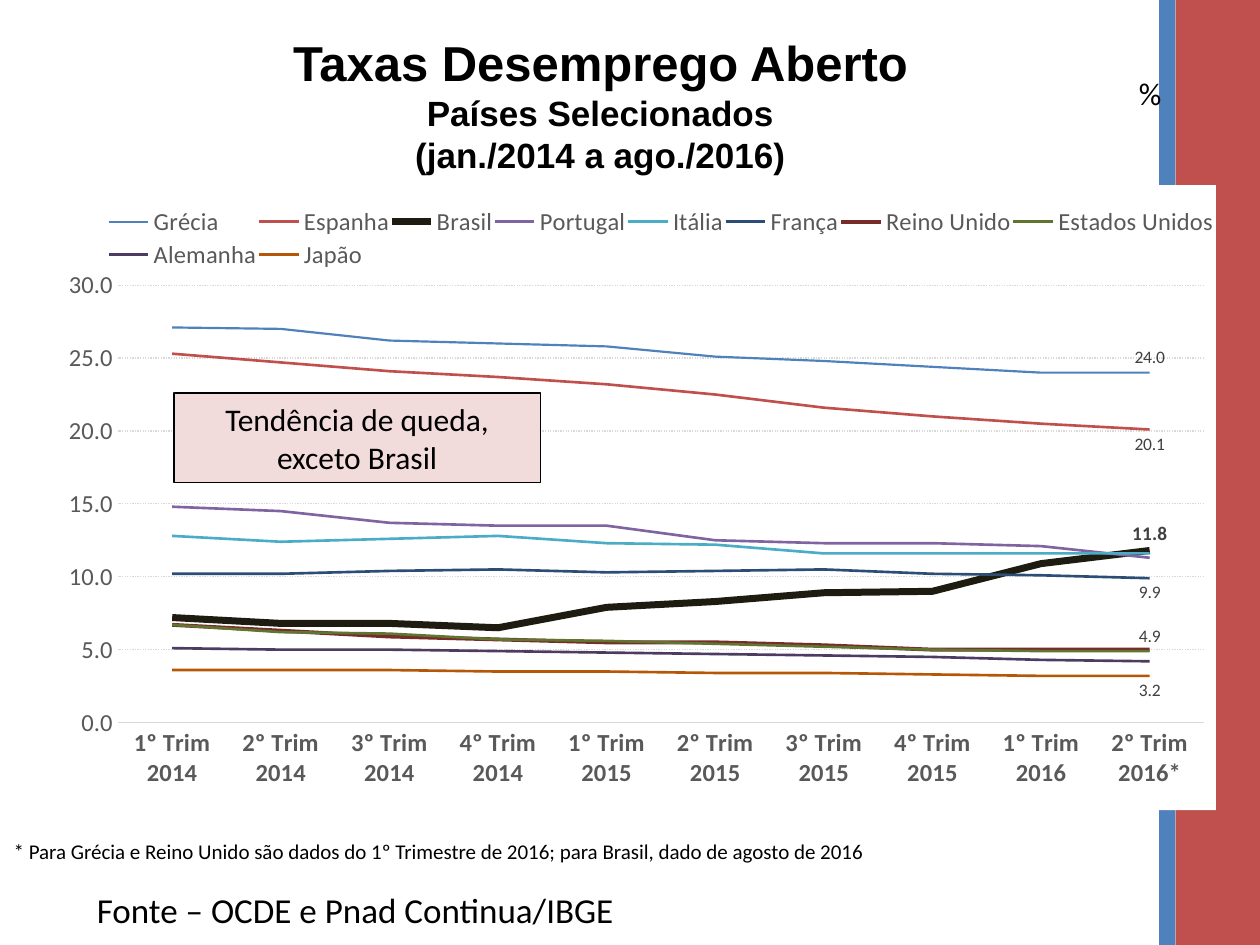
from pptx import Presentation, oxml
from pptx import util as u
from pptx.chart.data import CategoryChartData
from pptx.dml.color import RGBColor
from pptx.enum import chart as ch, dml, shapes, text
from pptx.oxml import ns

THEME = {
    "heading_font": "Arial", "body_font": "Calibri",
    "black": "000000", "white": "FFFFFF", "grey": "595959", "label": "404040",
    "rule": "D9D9D9", "callout": "F2DCDB", "blue": "4F81BD", "red": "C0504D",
    "title": 28, "subtitle": 20, "source": 20, "body": 18, "axis": 14,
    "note": 12, "value": 10, "key_value": 11,
}

HEADINGS = [
    ("Taxas Desemprego Aberto", "title"),
    ("Países Selecionados", "subtitle"),
    ("(jan./2014 a ago./2016)", "subtitle"),
]
BARS = [(9.2, 0.13, "blue"), (9.33, 0.67, "red")]
CAPTIONS = [
    ("* Para Grécia e Reino Unido são dados do 1º Trimestre de 2016; "
     "para Brasil, dado de agosto de 2016", "note", (0.01, 6.61, 7.01, 0.3)),
    ("%", "body", (8.94, 0.54, 0.71, 0.4)),
    ("Fonte – OCDE e Pnad Continua/IBGE", "source", (0.67, 7, 8.6, 0.44)),
]
CALLOUT = ("Tendência de queda, exceto Brasil", "body", (1.38, 3.12, 2.91, 0.71))

QUARTERS = [f"{1 + i % 4}º Trim {2014 + i // 4}" for i in range(9)] + ["2º Trim 2016*"]
ABOVE, BELOW = ch.XL_LABEL_POSITION.ABOVE, ch.XL_LABEL_POSITION.BELOW
COUNTRIES = [
    ("Grécia", "4F81BD", 1.25, ABOVE, (27.1, 27, 26.2, 26, 25.8, 25.1, 24.8, 24.4, 24, 24)),
    ("Espanha", "C0504D", 1.5, BELOW, (25.3, 24.7, 24.1, 23.7, 23.2, 22.5, 21.6, 21, 20.5, 20.1)),
    ("Brasil", "1E1C11", 4, ABOVE, (7.2, 6.8, 6.8, 6.5, 7.9, 8.3, 8.9, 9, 10.9, 11.8)),
    ("Portugal", "8064A2", 1.5, None, (14.8, 14.5, 13.7, 13.5, 13.5, 12.5, 12.3, 12.3, 12.1, 11.3)),
    ("Itália", "4BACC6", 1.5, None, (12.8, 12.4, 12.6, 12.8, 12.3, 12.2, 11.6, 11.6, 11.6, 11.6)),
    ("França", "2C4D75", 1.5, BELOW, (10.2, 10.2, 10.4, 10.5, 10.3, 10.4, 10.5, 10.2, 10.1, 9.9)),
    ("Reino Unido", "772C2A", 2.25, None, (6.7, 6.3, 5.9, 5.7, 5.5, 5.5, 5.3, 5, 5, 5)),
    ("Estados Unidos", "5F7530", 1.5, ABOVE, (6.7, 6.2, 6.1, 5.7, 5.6, 5.4, 5.2, 5, 4.9, 4.9)),
    ("Alemanha", "4D3B62", 1.5, None, (5.1, 5, 5, 4.9, 4.8, 4.7, 4.6, 4.5, 4.3, 4.2)),
    ("Japão", "B65708", 1.5, BELOW, (3.6, 3.6, 3.6, 3.5, 3.5, 3.4, 3.4, 3.3, 3.2, 3.2)),
]
HIGHLIGHT = "Brasil"
CHART_BOX = (0.28, 1.47, 9.37, 4.96)
PLOT_LAYOUT = (0.07, 0.16, 0.92, 0.7)
LEGEND_LAYOUT = (0.06, 0.03, 0.94, 0.11)


def rgb(name):
    return RGBColor.from_string(THEME.get(name, name))


def place(box):
    return [u.Inches(length) for length in box]


def style(font, size, color="black", family="body_font", bold=False):
    font.size = u.Pt(THEME[size])
    font.name = THEME[family]
    font.bold = bold
    font.color.rgb = rgb(color)


def add_rectangle(slide, box, color):
    rectangle = slide.shapes.add_shape(shapes.MSO_SHAPE.RECTANGLE, *place(box))
    rectangle.shadow.inherit = False
    rectangle.fill.solid()
    rectangle.fill.fore_color.rgb = rgb(color)
    rectangle.line.fill.background()
    return rectangle


def add_title(slide):
    title = slide.shapes.title
    title.left, title.top, title.width, title.height = place((0.63, 0.21, 8.27, 1.25))
    frame = title.text_frame
    frame.auto_size = text.MSO_AUTO_SIZE.NONE
    frame.vertical_anchor = text.MSO_ANCHOR.TOP
    frame.text = "\n".join(words for words, _ in HEADINGS)
    for paragraph, (_, size) in zip(frame.paragraphs, HEADINGS):
        paragraph.alignment = text.PP_ALIGN.CENTER
        style(paragraph.font, size, family="heading_font", bold=True)


def write(shape, words, size, alignment):
    shape.text_frame.word_wrap = True
    paragraph = shape.text_frame.paragraphs[0]
    paragraph.text = words
    paragraph.alignment = alignment
    style(paragraph.font, size)


def set_layout(parent, box, inner=False):
    for old in parent.findall(ns.qn("c:layout")):
        parent.remove(old)
    target = '<c:layoutTarget val="inner"/>' if inner else ""
    modes = '<c:xMode val="edge"/><c:yMode val="edge"/>'
    sizes = "".join(f'<c:{key} val="{value}"/>' for key, value in zip("xywh", box))
    layout = oxml.parse_xml(
        f'<c:layout {ns.nsdecls("c")}><c:manualLayout>{target}{modes}{sizes}'
        "</c:manualLayout></c:layout>")
    parent.insert(0 if inner else 1, layout)


def format_axes(chart):
    quarters, rates = chart.category_axis, chart.value_axis
    for axis in (quarters, rates):
        axis.major_tick_mark = axis.minor_tick_mark = ch.XL_TICK_MARK.NONE
        style(axis.tick_labels.font, "axis", "grey", bold=axis is quarters)
    rates.minimum_scale, rates.maximum_scale, rates.major_unit = 0, 30, 5
    rates.tick_labels.number_format = "0.0"
    rates.tick_labels.number_format_is_linked = False
    rates.format.line.fill.background()
    rates.has_major_gridlines = True
    grid = rates.major_gridlines.format.line
    for line in (quarters.format.line, grid):
        line.color.rgb = rgb("rule")
        line.width = u.Pt(0.75)
    grid.dash_style = dml.MSO_LINE.ROUND_DOT


def add_chart(slide):
    data = CategoryChartData(number_format="0.0")
    data.categories = QUARTERS
    for country, _, _, _, rates in COUNTRIES:
        data.add_series(country, rates)
    chart = slide.shapes.add_chart(ch.XL_CHART_TYPE.LINE, *place(CHART_BOX), data).chart
    chart.has_title = False
    style(chart.font, "value")
    format_axes(chart)
    chart.plots[0].vary_by_categories = False

    for series, (country, color, width, position, _) in zip(chart.plots[0].series, COUNTRIES):
        series.smooth = False
        series.format.line.color.rgb = rgb(color)
        series.format.line.width = u.Pt(width)
        if position is not None:
            series.data_labels.show_value = False
            label = series.points[len(QUARTERS) - 1].data_label
            key = country == HIGHLIGHT
            style(label.font, "key_value" if key else "value", "label", bold=key)
            label.position = position

    chart.has_legend = True
    chart.legend.position = ch.XL_LEGEND_POSITION.BOTTOM
    chart.legend.include_in_layout = False
    style(chart.legend.font, "axis", "grey")
    root = chart.element
    set_layout(root.xpath("c:chart/c:plotArea")[0], PLOT_LAYOUT, inner=True)
    set_layout(root.xpath("c:chart/c:legend")[0], LEGEND_LAYOUT)
    root.find(ns.qn("c:txPr")).addprevious(oxml.parse_xml(
        f'<c:spPr {ns.nsdecls("c", "a")}><a:solidFill><a:srgbClr val="{THEME["white"]}"/>'
        "</a:solidFill><a:ln><a:noFill/></a:ln></c:spPr>"))


def main():
    deck = Presentation()
    deck.slide_width, deck.slide_height = u.Inches(10), u.Inches(7.5)
    slide = deck.slides.add_slide(deck.slide_layouts[5])
    for left, width, color in BARS:
        add_rectangle(slide, (left, 0, width, 7.5), color)
    add_title(slide)
    add_chart(slide)
    for words, size, box in CAPTIONS:
        write(slide.shapes.add_textbox(*place(box)), words, size, text.PP_ALIGN.LEFT)
    words, size, box = CALLOUT
    callout = add_rectangle(slide, box, "callout")
    callout.line.color.rgb = rgb("black")
    callout.line.width = u.Pt(0.75)
    write(callout, words, size, text.PP_ALIGN.CENTER)
    deck.save("out.pptx")


if __name__ == "__main__":
    main()
